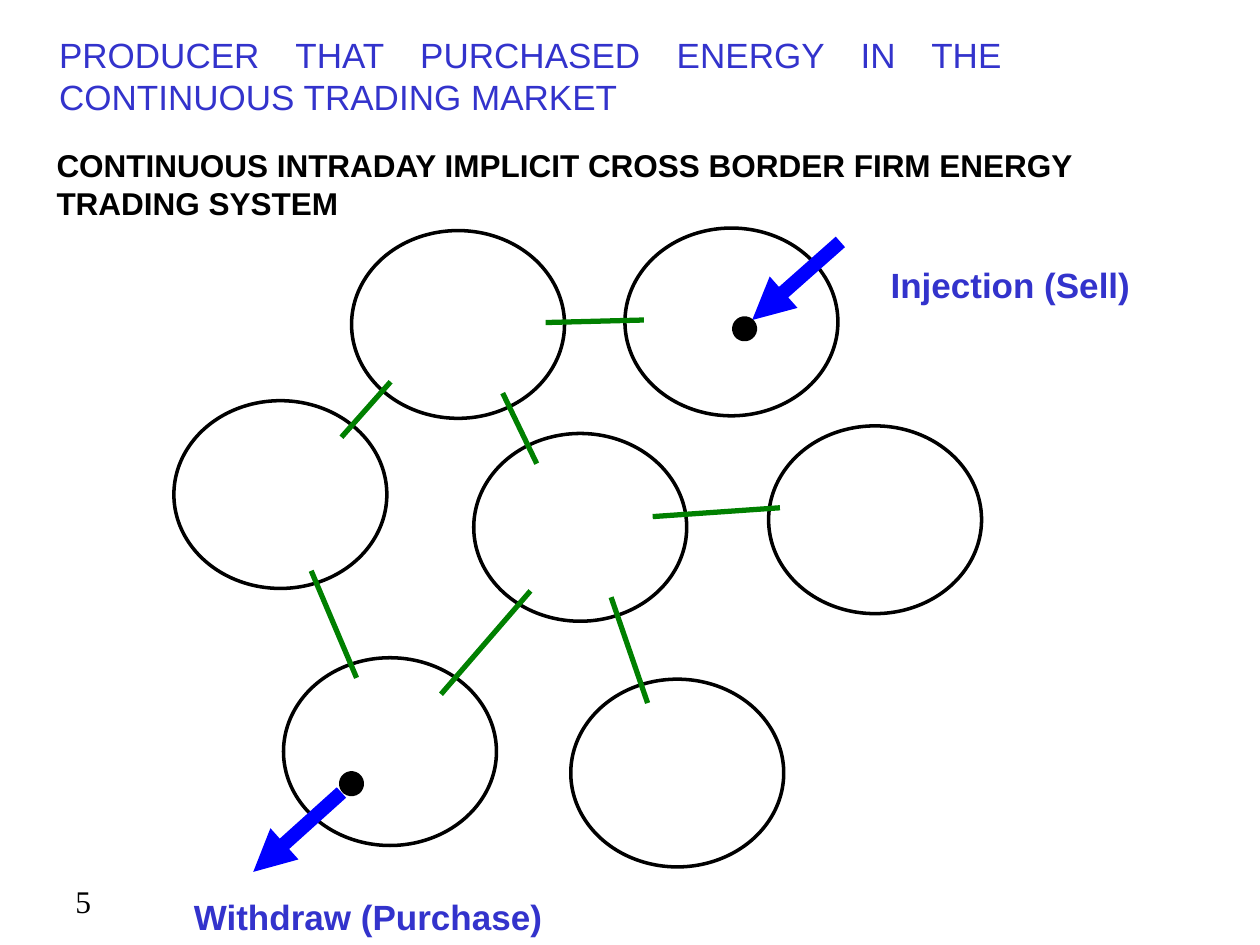
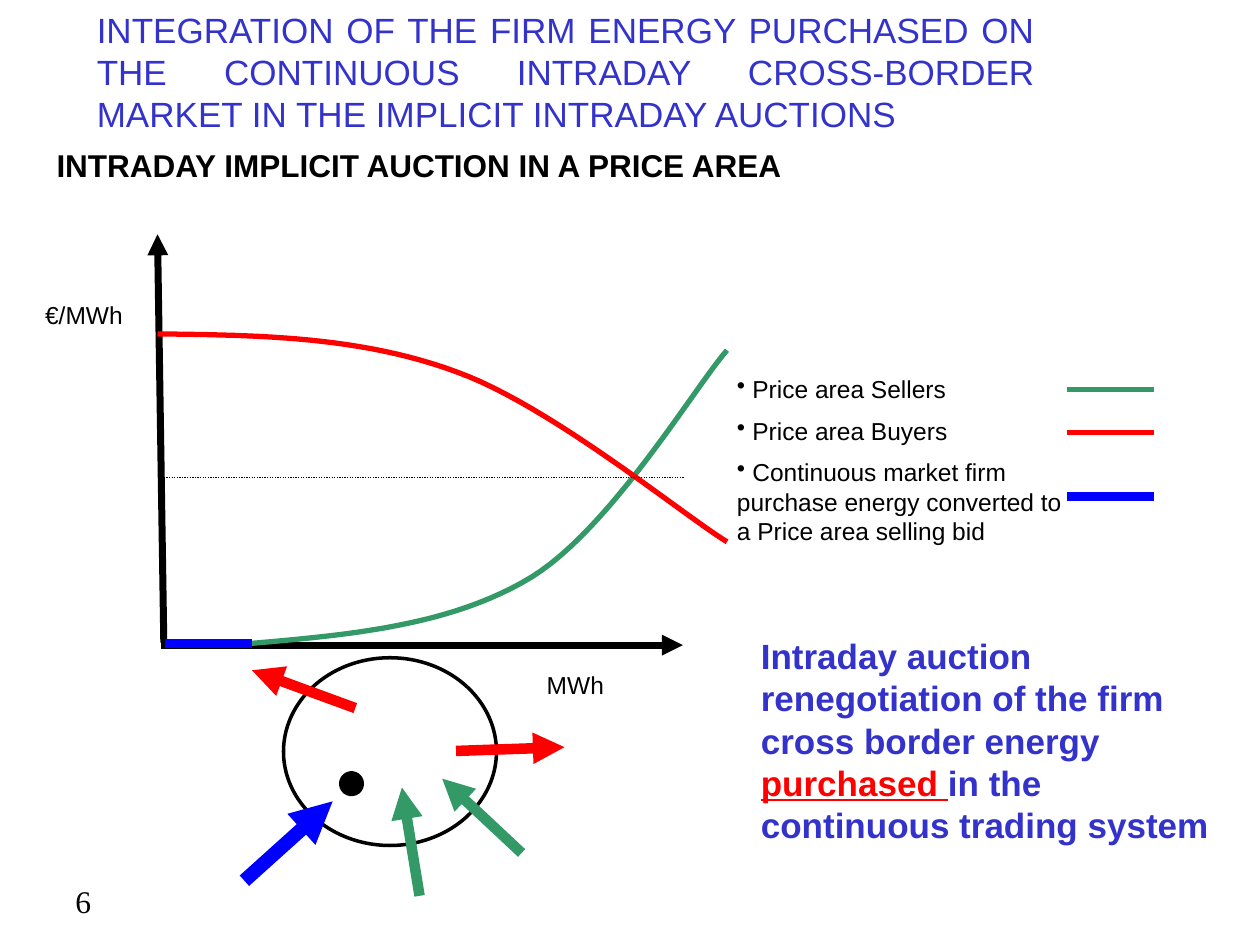
from dataclasses import dataclass

from lxml import etree
from pptx import Presentation
from pptx import util as u
from pptx.dml import color
from pptx.enum import dml, shapes, text
from pptx.oxml import ns


@dataclass(frozen=True)
class Theme:
    black: str = "000000"
    accent: str = "3333CC"
    border_link: str = "008000"
    seller: str = "339966"
    buyer: str = "FF0000"
    firm: str = "0000FF"
    sans: str = "Arial"
    serif: str = "Times New Roman"
    heading_size: int = 20
    subtitle_size: int = 18
    label_size: int = 14
    bullet_gap: int = 7


THEME = Theme()
COLUMNS, ROWS = 100, 75
AREA_SIZE = (16.9, 14.9)
DOT_SIZE = (1, 1)
WITHDRAW_AREA = (22.5, 52.2)
WITHDRAW_DOT = (27.4, 61.7)


def rgb(value):
    return color.RGBColor.from_string(value)


def bezier(start, control_a, control_b, end, steps=24):
    """Points along one cubic curve, without its start."""
    for step in range(1, steps + 1):
        t = step / steps
        weights = ((1 - t) ** 3, 3 * t * (1 - t) ** 2, 3 * t * t * (1 - t), t ** 3)
        corners = (start, control_a, control_b, end)
        yield tuple(sum(w * corner[axis] for w, corner in zip(weights, corners))
                    for axis in (0, 1))


class Sketch:
    """Holds the theme and the current page; places elements on the grid."""

    def __init__(self, deck, theme):
        self.deck, self.theme, self.page = deck, theme, None

    def x(self, columns):
        return round(self.deck.slide_width * columns / COLUMNS)

    def y(self, rows):
        return round(self.deck.slide_height * rows / ROWS)

    def place(self, *numbers):
        """Turn alternating columns and rows into lengths."""
        return [(self.x, self.y)[i % 2](n) for i, n in enumerate(numbers)]

    def start_page(self, number, title, title_at, subtitle, subtitle_height):
        theme = self.theme
        self.page = self.deck.slides.add_slide(self.deck.slide_layouts[6])
        self.add_text(str(number), (5, 69.5, 23.3, 4), size=theme.subtitle_size,
                      font=theme.serif)
        self.add_text(title, title_at, size=theme.heading_size, ink=theme.accent,
                      align=text.PP_ALIGN.JUSTIFY, anchor=text.MSO_ANCHOR.MIDDLE)
        self.add_text(subtitle, (3.5, 11.1, 94.2, subtitle_height),
                      size=theme.subtitle_size, bold=True)

    def add_text(self, content, at, size=THEME.label_size, font=THEME.sans,
                 ink=THEME.black, bold=False, align=text.PP_ALIGN.LEFT,
                 anchor=text.MSO_ANCHOR.TOP, bullet=None, gap=0, marked=None):
        """Add a string or a list of paragraphs; the marked words stand out."""
        box = self.page.shapes.add_textbox(*self.place(*at))
        frame = box.text_frame
        frame.word_wrap = True
        frame.vertical_anchor = anchor
        paragraphs = [content] if isinstance(content, str) else content
        for index, words in enumerate(paragraphs):
            para = frame.paragraphs[0] if index == 0 else frame.add_paragraph()
            if bullet:
                properties = para._p.get_or_add_pPr()
                etree.SubElement(properties, ns.qn("a:buChar"), char=bullet)
            para.alignment = align
            if index:
                para.space_before = u.Pt(gap)
            pieces = words.partition(marked) if marked else (words,)
            for piece in filter(None, pieces):
                span = para.add_run()
                span.text = piece
                span.font.name, span.font.size = font, u.Pt(size)
                span.font.bold = bold
                span.font.underline = piece == marked
                span.font.color.rgb = rgb(self.theme.buyer if piece == marked else ink)

    def ellipse(self, corner, size, weight, fill=None):
        oval = self.page.shapes.add_shape(shapes.MSO_SHAPE.OVAL,
                                          *self.place(*corner, *size))
        self.outline(oval, self.theme.black, weight, fill)

    def area(self, corner):
        self.ellipse(corner, AREA_SIZE, 2)

    def dot(self, corner):
        self.ellipse(corner, DOT_SIZE, 7.25, self.theme.black)

    def outline(self, shape, ink, weight, fill=None):
        shape.shadow.inherit = False
        if fill:
            shape.fill.solid()
            shape.fill.fore_color.rgb = rgb(fill)
        else:
            shape.fill.background()
        shape.line.color.rgb = rgb(ink)
        shape.line.width = u.Pt(weight)

    def line(self, start, end, ink, weight, arrow=False, dash=None):
        link = self.page.shapes.add_connector(shapes.MSO_CONNECTOR.STRAIGHT,
                                              *self.place(*start, *end))
        link.line.color.rgb = rgb(ink)
        link.line.width = u.Pt(weight)
        if dash:
            link.line.dash_style = dash
        if arrow:
            etree.SubElement(link.line._ln, ns.qn("a:tailEnd"), type="triangle")
        etree.SubElement(link._element.spPr, ns.qn("a:effectLst"))

    def curve(self, start, *segments, ink, weight=3):
        points, last = [], start
        for segment in segments:
            points += bezier(last, *segment)
            last = segment[-1]
        builder = self.page.shapes.build_freeform(*self.place(*start))
        builder.add_line_segments([self.place(*point) for point in points], close=False)
        self.outline(builder.convert_to_shape(), ink, weight)


def draw_trading_system(sketch):
    theme = sketch.theme
    sketch.start_page(
        5, "PRODUCER THAT PURCHASED ENERGY IN THE CONTINUOUS TRADING MARKET",
        (3.7, 2.9, 76.8, 6.2),
        "CONTINUOUS INTRADAY IMPLICIT CROSS BORDER FIRM ENERGY TRADING SYSTEM", 7)

    # Price areas and the borders between them
    for corner in ((27.9, 18.3), (49.6, 18.1), (13.8, 31.8), (37.6, 34.4),
                   (61, 33.8), WITHDRAW_AREA, (45.3, 53.9)):
        sketch.area(corner)
    for start, end in (((31, 30.3), (27.1, 34.7)), ((51.1, 25.4), (43.3, 25.6)),
                       ((39.9, 31.2), (42.6, 36.8)), ((24.7, 45.3), (28.3, 53.8)),
                       ((61.9, 40.3), (51.8, 41)), ((48.5, 47.4), (51.4, 55.8)),
                       ((42.1, 46.9), (35, 55.1))):
        sketch.line(start, end, theme.border_link, 3)

    # Energy entering and leaving
    for label, at, start, end, dot in (
            ("Injection (Sell)", (69.7, 20.4, 23.6, 4.4),
             (66.7, 19.2), (59.7, 25.4), (58.6, 25.6)),
            ("Withdraw (Purchase)", (14.4, 70.6, 31.7, 4.4),
             (27.1, 62.9), (20.1, 69.2), WITHDRAW_DOT)):
        sketch.line(start, end, theme.firm, 8, arrow=True)
        sketch.add_text(label, at, size=theme.heading_size, ink=theme.accent, bold=True)
        sketch.dot(dot)


def draw_auction(sketch):
    theme = sketch.theme
    sketch.start_page(
        6, "INTEGRATION OF THE FIRM ENERGY PURCHASED ON THE CONTINUOUS INTRADAY "
        "CROSS-BORDER MARKET IN THE IMPLICIT INTRADAY AUCTIONS",
        (6.7, 2.1, 76.4, 7.1), "INTRADAY IMPLICIT AUCTION IN A PRICE AREA", 4)
    sketch.area(WITHDRAW_AREA)
    sketch.dot(WITHDRAW_DOT)

    # Axes
    sketch.line((12.8, 51.2), (54.2, 51.2), theme.black, 4, arrow=True)
    sketch.line((13, 51), (12.5, 18.6), theme.black, 4, arrow=True)
    sketch.add_text("€/MWh", (2.6, 23.3, 9, 3.3))
    sketch.add_text("MWh", (42.4, 52.7, 8.8, 3.4))

    # Supply and demand curves, firm energy and clearing price
    sketch.curve((19.6, 51.1), ((27.7, 50.4), (35.8, 49.7), (42.2, 45.8)),
                 ((48.5, 41.9), (55.1, 30.8), (57.7, 27.8)), ink=theme.seller)
    sketch.curve((12.5, 26.5), ((20.6, 26.6), (28.6, 26.7), (36.2, 29.5)),
                 ((43.7, 32.2), (54.1, 40.8), (57.7, 43)), ink=theme.buyer)
    sketch.line((13.1, 51.1), (20, 51.1), theme.firm, 5)
    sketch.line((12.8, 37.9), (54.3, 37.9), theme.black, 0.75,
                dash=dml.MSO_LINE.ROUND_DOT)

    # Legend
    sketch.add_text([" Price area Sellers", " Price area Buyers",
                     " Continuous market firm purchase energy converted to "
                     "a Price area selling bid"],
                    (57.5, 29.2, 29.2, 15.1), bullet="•", gap=theme.bullet_gap)
    for row, ink, weight in ((30.9, theme.seller, 3), (34.3, theme.buyer, 3),
                             (39.4, theme.firm, 5)):
        sketch.line((84.7, row), (91.6, row), ink, weight)

    # Message
    sketch.add_text("Intraday auction renegotiation of the firm cross border energy "
                    "purchased in the continuous trading system",
                    (59.4, 49.9, 38.2, 17.8), size=theme.heading_size,
                    ink=theme.accent, bold=True, marked="purchased ")

    # Bids into and out of the price area
    for start, end, ink, weight in (
            ((33.3, 71.1), (31.9, 62.5), theme.seller, 6),
            ((36.2, 59.6), (44.8, 59.3), theme.buyer, 6),
            ((41.4, 67.7), (35.1, 61.8), theme.seller, 6),
            ((28.2, 56.2), (20, 53.2), theme.buyer, 6),
            ((19.4, 69.9), (26.4, 63.6), theme.firm, 8)):
        sketch.line(start, end, ink, weight, arrow=True)


def main():
    deck = Presentation()
    deck.slide_width, deck.slide_height = u.Inches(10), u.Inches(7.5)
    sketch = Sketch(deck, THEME)
    draw_trading_system(sketch)
    draw_auction(sketch)
    deck.save("out.pptx")


if __name__ == "__main__":
    main()
